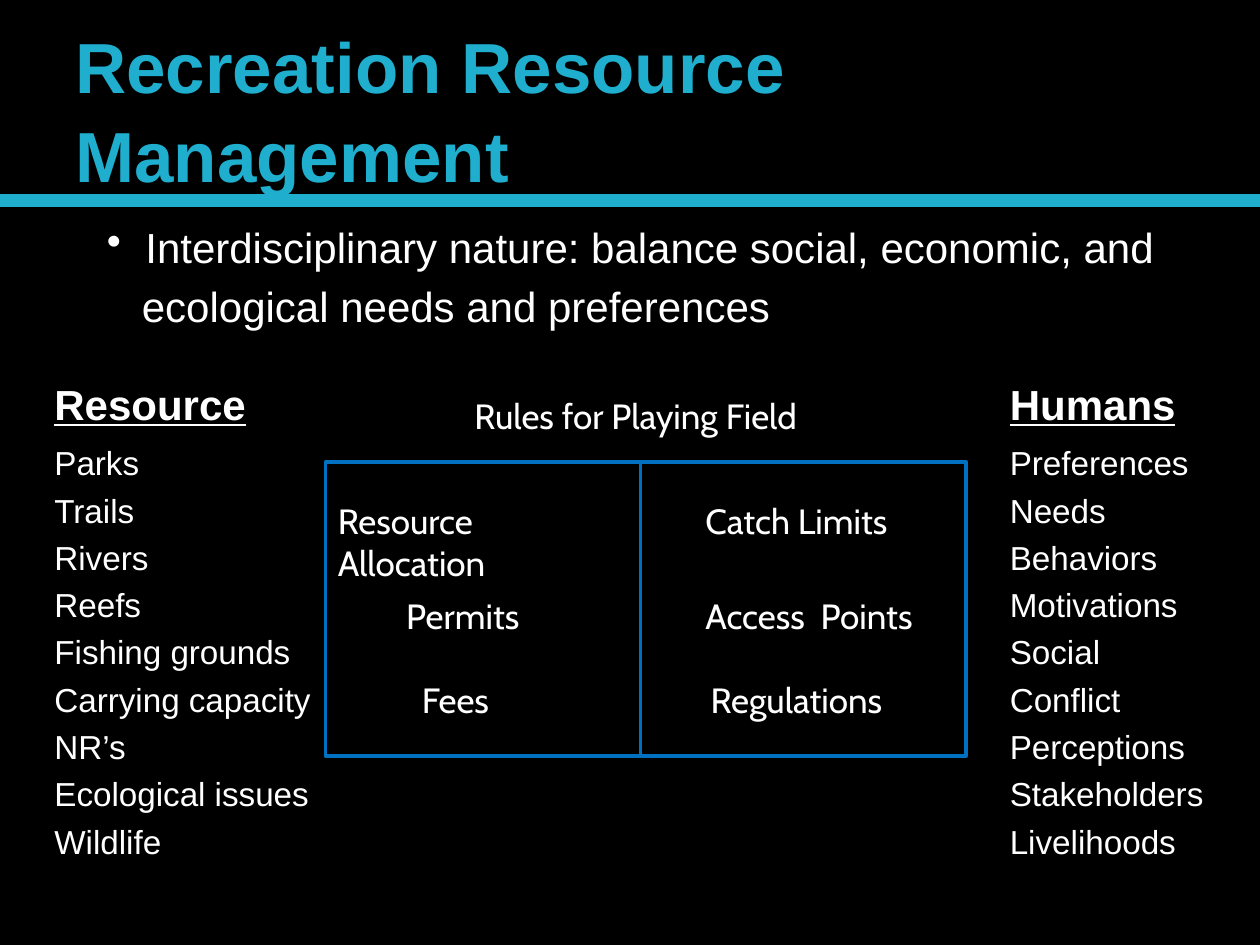
import dataclasses

import pptx
import pptx.dml.color
import pptx.enum.shapes
import pptx.enum.text
import pptx.oxml.ns
import pptx.util
from lxml import etree

Pt = pptx.util.Pt
RGB = pptx.dml.color.RGBColor
Anchor = pptx.enum.text.MSO_ANCHOR
Shapes = pptx.enum.shapes


@dataclasses.dataclass(frozen=True)
class Theme:
    black: RGB = RGB(0, 0, 0)
    white: RGB = RGB(255, 255, 255)
    accent: RGB = RGB(0x1F, 0xAE, 0xCD)
    frame: RGB = RGB(0x00, 0x70, 0xC0)
    body_font: str = "Arial"
    label_font: str = "Cabin"
    title_size: float = 40.5
    heading_size: float = 24
    list_size: float = 19
    label_size: float = 20


@dataclasses.dataclass(frozen=True)
class Box:
    left: float
    top: float
    width: float
    height: float

    def points(self):
        return [Pt(value) for value in dataclasses.astuple(self)]


THEME = Theme()


def add_text(page, box, lines, size, font=THEME.body_font, color=THEME.white,
             bold=False, underline=False, spacing=None, gap=0):
    shape = page.shapes.add_textbox(*box.points())
    frame = shape.text_frame
    frame.word_wrap = True
    frame.auto_size = pptx.enum.text.MSO_AUTO_SIZE.SHAPE_TO_FIT_TEXT
    for index, line in enumerate(lines):
        para = frame.add_paragraph() if index else frame.paragraphs[0]
        para.line_spacing = spacing
        para.space_before = Pt(gap if index else 0)
        span = para.add_run()
        span.text = line
        span.font.name = font
        span.font.size = Pt(size)
        span.font.bold = bold
        span.font.underline = underline
        span.font.color.rgb = color
    return frame


def add_rectangle(page, box, fill, line, weight):
    shape = page.shapes.add_shape(Shapes.MSO_SHAPE.RECTANGLE, *box.points())
    shape.shadow.inherit = False
    shape.fill.solid()
    shape.fill.fore_color.rgb = fill
    shape.line.color.rgb = line
    shape.line.width = Pt(weight)


def indent(para, margin, bullet=None):
    properties = para._p.get_or_add_pPr()
    properties.set("marL", str(Pt(margin)))
    properties.set("indent", str(-Pt(margin) if bullet else 0))
    if bullet:
        mark = etree.SubElement(properties, pptx.oxml.ns.qn("a:buChar"))
        mark.set("char", bullet)


def title_region(page, box, rule):
    frame = add_text(page, box, ["Recreation Resource Management"],
                     THEME.title_size, color=THEME.accent, bold=True, spacing=1.05)
    frame.auto_size = pptx.enum.text.MSO_AUTO_SIZE.NONE
    frame.vertical_anchor = Anchor.MIDDLE
    frame.margin_right = Pt(3.6)
    add_rectangle(page, rule, THEME.white, THEME.accent, 3.78)


def summary_region(page, box):
    lines = ["Interdisciplinary nature: balance social, economic, and",
             "ecological needs and preferences"]
    frame = add_text(page, box, lines, THEME.heading_size, spacing=0.9, gap=8)
    first, second = frame.paragraphs
    indent(first, 22, "•")
    indent(second, 20)


def list_region(page, box, heading, heading_width, items):
    head = Box(box.left, box.top, heading_width, 33)
    add_text(page, head, [heading], THEME.heading_size,
             bold=True, underline=True, spacing=0.9)
    body = Box(box.left, box.top + 36, box.width, box.height - 36)
    add_text(page, body, items, THEME.list_size, spacing=0.9, gap=6.5)


def field_region(page, box):
    add_rectangle(page, box, THEME.black, THEME.frame, 2)
    middle = box.left + 180
    divider = page.shapes.add_connector(
        Shapes.MSO_CONNECTOR.STRAIGHT, Pt(middle), Pt(box.top),
        Pt(middle), Pt(box.top + box.height))
    divider.line.color.rgb = THEME.frame
    divider.line.width = Pt(2)
    etree.SubElement(divider._element.spPr, pptx.oxml.ns.qn("a:effectLst"))
    labels = [
        ("Rules for Playing Field", 78, -42, 216),
        ("Resource Allocation", 0, 18, 180),
        ("Permits", 39, 72, 114),
        ("Fees", 48, 120, 66),
        ("Catch Limits", 210, 18, 138),
        ("Access  Points", 210, 72, 138),
        ("Regulations", 213, 120, 132),
    ]
    for text, across, down, width in labels:
        place = Box(box.left + across, box.top + down, width, 31.5)
        add_text(page, place, [text], THEME.label_size, THEME.label_font)


def main():
    deck = pptx.Presentation()
    deck.slide_width, deck.slide_height = Pt(720), Pt(540)
    page = deck.slides.add_slide(deck.slide_layouts[6])
    page.background.fill.solid()
    page.background.fill.fore_color.rgb = THEME.black

    title_region(page, Box(36, 12, 666, 99), Box(0, 113, 720, 3.6))
    summary_region(page, Box(54, 126, 624, 68))
    field_region(page, Box(186, 264, 366, 168))
    list_region(page, Box(24, 216, 168, 285), "Resource", 133,
                ["Parks", "Trails", "Rivers", "Reefs", "Fishing grounds",
                 "Carrying capacity", "NR’s", "Ecological issues", "Wildlife"])
    list_region(page, Box(570, 216, 150, 285), "Humans", 120,
                ["Preferences", "Needs", "Behaviors", "Motivations", "Social",
                 "Conflict", "Perceptions", "Stakeholders", "Livelihoods"])
    deck.save("out.pptx")


if __name__ == "__main__":
    main()
